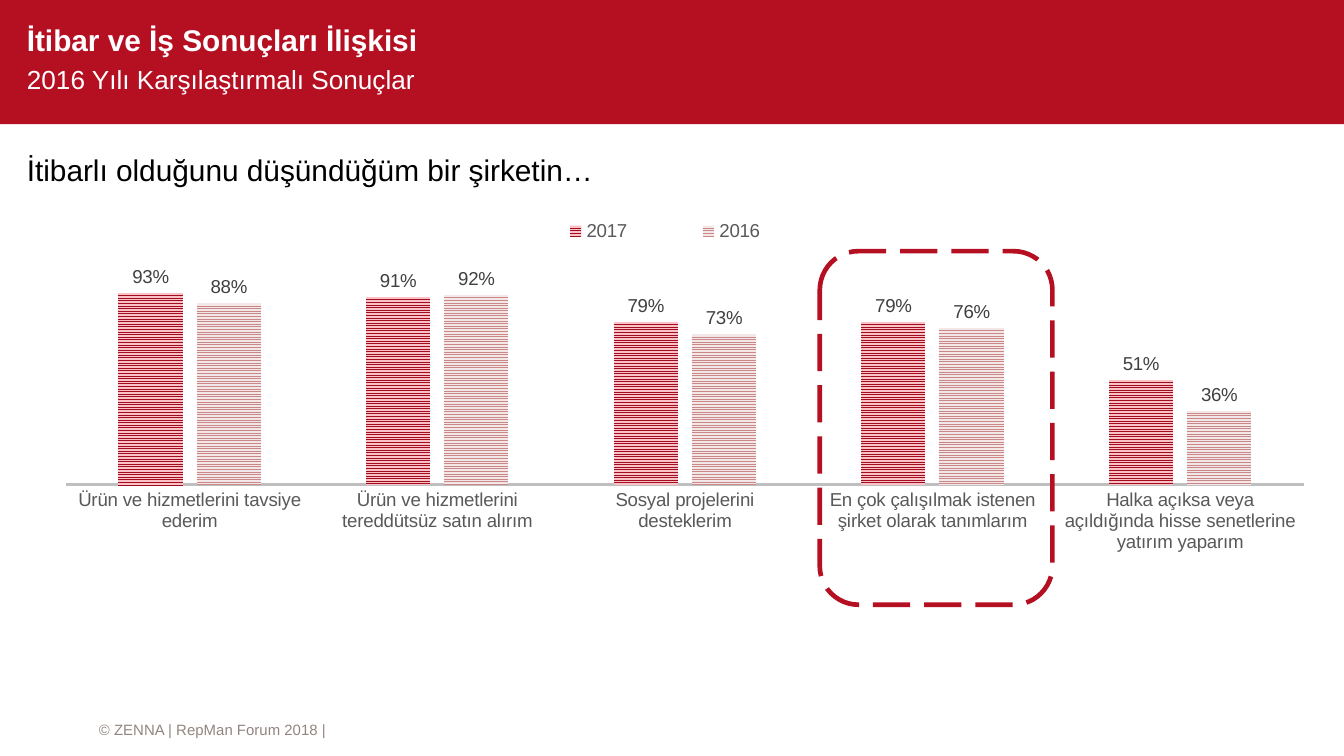
from lxml import etree
from pptx import Presentation
from pptx.chart.data import CategoryChartData
from pptx.dml.color import RGBColor
from pptx.enum.chart import XL_CHART_TYPE, XL_LABEL_POSITION, XL_LEGEND_POSITION, XL_TICK_MARK
from pptx.enum.dml import MSO_LINE, MSO_PATTERN
from pptx.enum.shapes import MSO_SHAPE
from pptx.enum.text import MSO_ANCHOR, MSO_AUTO_SIZE, PP_ALIGN
from pptx.oxml.ns import qn
from pptx.util import Pt

COLUMNS = XL_CHART_TYPE.COLUMN_CLUSTERED
STRIPES = MSO_PATTERN.NARROW_HORIZONTAL
FONT = "Arial"
COLORS = {
    "red": "B50F22", "white": "FFFFFF", "black": "000000", "footer": "928580",
    "axis": "BFBFBF", "axis_text": "595959", "label": "404040",
    "dark": "A10D1E", "dark_back": "FAC1C7", "light": "C98788", "light_back": "F4E7E7",
}
CATEGORIES = [
    "Ürün ve hizmetlerini tavsiye ederim",
    "Ürün ve hizmetlerini tereddütsüz satın alırım",
    "Sosyal projelerini desteklerim",
    "En çok çalışılmak istenen şirket olarak tanımlarım",
    "Halka açıksa veya açıldığında hisse senetlerine yatırım yaparım",
]
SERIES = [
    ("2017", (0.93, 0.91, 0.79, 0.79, 0.51), "dark", "dark_back"),
    ("2016", (0.88, 0.92, 0.73, 0.76, 0.36), "light", "light_back"),
]


def rgb(name):
    """Return the named colour."""
    return RGBColor.from_string(COLORS[name])


def style_font(font, size, color, bold=False):
    """Set the face, size, weight and colour of a font."""
    font.name, font.size, font.bold = FONT, Pt(size), bold
    font.color.rgb = rgb(color)


def write_text(shape, lines, anchor=MSO_ANCHOR.TOP):
    """Fill a shape with one paragraph per (text, size, colour, bold) line."""
    frame = shape.text_frame
    frame.word_wrap, frame.auto_size = True, MSO_AUTO_SIZE.NONE
    frame.vertical_anchor = anchor
    frame.margin_left = frame.margin_top = frame.margin_right = frame.margin_bottom = 0
    for index, (text, size, color, bold) in enumerate(lines):
        para = frame.add_paragraph() if index else frame.paragraphs[0]
        para.alignment = PP_ALIGN.LEFT
        para.space_before = Pt(3 if index else 0)
        span = para.add_run()
        span.text = text
        style_font(span.font, size, color, bold)


def add_text(page, box, line, anchor=MSO_ANCHOR.TOP):
    """Add a text box holding one line."""
    write_text(page.shapes.add_textbox(*map(Pt, box)), [line], anchor)


def add_header(page, box):
    """Add the red banner with the two-line title on it."""
    left, top, width, height = box
    banner = page.shapes.add_shape(MSO_SHAPE.RECTANGLE, *map(Pt, box))
    banner.shadow.inherit = False
    banner.fill.solid()
    banner.fill.fore_color.rgb = rgb("red")
    banner.line.fill.background()
    title = page.shapes.title
    title.element.addprevious(banner.element)
    title.left, title.top = Pt(left + 14.4), Pt(top + 11.5)
    title.width, title.height = Pt(width - 14.4), Pt(height - 25)
    write_text(title, [
        ("İtibar ve İş Sonuçları İlişkisi", 16, "white", True),
        ("2016 Yılı Karşılaştırmalı Sonuçlar", 14, "white", False),
    ])


def set_layout(parent, box, inner=False):
    """Give a chart part a manual layout as fractions of the chart."""
    for old in parent.findall(qn("c:layout")):
        parent.remove(old)
    layout = etree.Element(qn("c:layout"))
    manual = etree.SubElement(layout, qn("c:manualLayout"))
    settings = [("layoutTarget", "inner")] if inner else []
    settings += [("xMode", "edge"), ("yMode", "edge"), *zip("xywh", map(str, box))]
    for tag, value in settings:
        etree.SubElement(manual, qn(f"c:{tag}")).set("val", value)
    parent.insert(0 if inner else 1, layout)


def add_results_chart(page, box):
    """Add the column chart that compares the two years."""
    data = CategoryChartData(number_format="0%")
    data.categories = CATEGORIES
    for name, values, *_ in SERIES:
        data.add_series(name, values)
    chart = page.shapes.add_chart(COLUMNS, *map(Pt, box), data).chart
    chart.has_title = False
    style_font(chart.font, 10, "black")
    plot = chart.plots[0]
    plot.gap_width, plot.overlap, plot.vary_by_categories = 164, -22, False
    for series, (_, _, front, back) in zip(plot.series, SERIES):
        fill = series.format.fill
        fill.patterned()
        fill.pattern = STRIPES
        fill.fore_color.rgb, fill.back_color.rgb = rgb(front), rgb(back)
        labels = series.data_labels
        labels.show_value, labels.position = True, XL_LABEL_POSITION.OUTSIDE_END
        labels.number_format, labels.number_format_is_linked = "0%", False
        style_font(labels.font, 10, "label")
    axis = chart.category_axis
    axis.major_tick_mark = axis.minor_tick_mark = XL_TICK_MARK.NONE
    axis.format.line.color.rgb, axis.format.line.width = rgb("axis"), Pt(1.5)
    style_font(axis.tick_labels.font, 10, "axis_text")
    scale = chart.value_axis
    scale.minimum_scale, scale.maximum_scale = 0, 1
    scale.has_major_gridlines = scale.visible = False
    chart.has_legend = True
    legend = chart.legend
    legend.position, legend.include_in_layout = XL_LEGEND_POSITION.TOP, False
    style_font(legend.font, 10, "axis_text")
    set_layout(legend.font._element.getparent().getparent().getparent()
               if legend.font._element.tag != qn("a:defRPr")
               else chart.element.find(".//" + qn("c:legend")), (0.38, 0.03, 0.25, 0.07))
    set_layout(chart.element.find(".//" + qn("c:plotArea")), (0.05, 0.18, 0.94, 0.5), True)


def add_highlight(page, box):
    """Add the dashed rounded frame around one category."""
    frame = page.shapes.add_shape(MSO_SHAPE.ROUNDED_RECTANGLE, *map(Pt, box))
    frame.shadow.inherit = False
    frame.fill.background()
    frame.line.color.rgb, frame.line.width = rgb("red"), Pt(2.5)
    frame.line.dash_style = MSO_LINE.LONG_DASH


def main():
    """Build and save the deck."""
    deck = Presentation()
    deck.slide_width, deck.slide_height = Pt(720), Pt(405)
    page = deck.slides.add_slide(deck.slide_layouts[5])
    add_header(page, (0, 0, 720, 66.5))
    add_text(page, (53, 385, 556, 11.5),
             ("© ZENNA | RepMan Forum 2018 |", 8, "footer", False), MSO_ANCHOR.MIDDLE)
    add_text(page, (14.4, 81.5, 641, 28),
             ("İtibarlı olduğunu düşündüğüm bir şirketin…", 16, "black", False))
    add_results_chart(page, (0, 109.5, 705.6, 221))
    add_highlight(page, (439.2, 134.6, 124.6, 189.4))
    deck.save("out.pptx")


if __name__ == "__main__":
    main()
